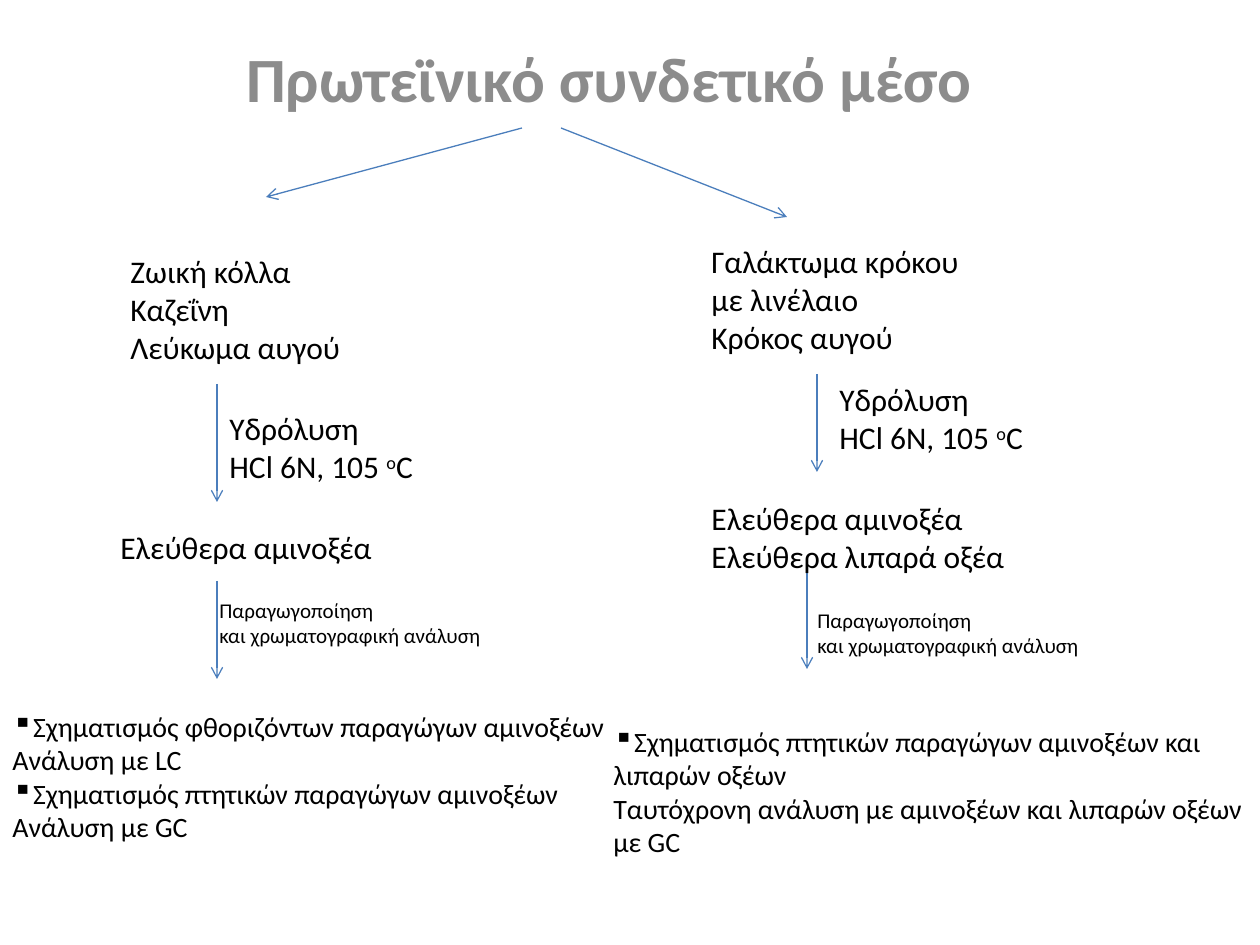
from lxml.etree import SubElement
from pptx import Presentation
from pptx.dml.color import RGBColor
from pptx.enum.shapes import MSO_CONNECTOR
from pptx.enum.text import MSO_ANCHOR, MSO_AUTO_SIZE, PP_ALIGN
from pptx.oxml.ns import qn
from pptx.util import Emu, Pt

PX = 914400 / 126
FONT = "Calibri"
COLORS = {"title": "8C8C8C", "text": "000000", "arrow": "4B7EBC"}

# Content: a line starting with the bullet sign is a bulleted one
BULLET = "▪"
SUPERSCRIPT = "^"
TITLE = ("Πρωτεϊνικό συνδετικό μέσο", (168, 33, 882, 105))
HYDROLYSIS = ["Υδρόλυση", "HCl 6N, 105 ^o^C"]
DERIVATIZATION = ["Παραγωγοποίηση", "και χρωματογραφική ανάλυση"]

# Each branch: texts as (lines, size, wrap, (left, top, width, height)), arrows as (from, to)
BRANCHES = [
    {
        "texts": [
            (["Ζωική κόλλα", "Καζεΐνη", "Λεύκωμα αυγού"], 18, False, (118, 246, 237, 127)),
            (HYDROLYSIS, 18, False, (217, 403, 220, 89)),
            (["Ελεύθερα αμινοξέα"], 18, False, (108, 522, 280, 50)),
            (DERIVATIZATION, 12, False, (207, 591, 294, 63)),
            (["▪Σχηματισμός φθοριζόντων παραγώγων αμινοξέων", "Ανάλυση με LC",
              "▪Σχηματισμός πτητικών παραγώγων αμινοξέων", "Ανάλυση με GC"],
             16, True, (0, 703, 650, 149)),
        ],
        "arrows": [((522, 128), (266, 197)), ((217, 384), (217, 502)), ((217, 581), (217, 679))],
    },
    {
        "texts": [
            (["Γαλάκτωμα κρόκου", "με λινέλαιο", "Κρόκος αυγού"], 18, False, (699, 236, 275, 127)),
            (HYDROLYSIS, 18, False, (827, 374, 220, 89)),
            (["Ελεύθερα αμινοξέα", "Ελεύθερα λιπαρά οξέα"], 18, False, (699, 493, 321, 89)),
            (DERIVATIZATION, 12, False, (805, 601, 294, 63)),
            (["▪Σχηματισμός πτητικών παραγώγων αμινοξέων και λιπαρών οξέων",
              "Ταυτόχρονη ανάλυση με αμινοξέων και λιπαρών οξέων με GC"],
             16, True, (601, 718, 659, 149)),
        ],
        "arrows": [((561, 128), (787, 217)), ((817, 374), (817, 472)), ((807, 571), (807, 669))],
    },
]


def px(*values):
    return [Emu(round(value * PX)) for value in values]


def format_font(font, **values):
    for name, value in {"name": FONT, **values}.items():
        setattr(font, name, value)


def add_line(para, line, size):
    if line.startswith(BULLET):
        properties = para._p.get_or_add_pPr()
        properties.set("marL", "0")
        properties.set("indent", "0")
        SubElement(properties, qn("a:buChar"), char=BULLET)
        line = line.removeprefix(BULLET)
    for index, part in enumerate(line.split(SUPERSCRIPT)):
        span = para.add_run()
        span.text = part
        format_font(span.font, size=Pt(size))
        span.font.color.rgb = RGBColor.from_string(COLORS["text"])
        if index % 2:
            span._r.get_or_add_rPr().set("baseline", "30000")


def add_text(slide, lines, size, wrap, place):
    frame = slide.shapes.add_textbox(*px(*place)).text_frame
    frame.word_wrap = wrap
    frame.auto_size = MSO_AUTO_SIZE.SHAPE_TO_FIT_TEXT
    for index, line in enumerate(lines):
        para = frame.add_paragraph() if index else frame.paragraphs[0]
        add_line(para, line, size)


def add_arrow(slide, start, end):
    arrow = slide.shapes.add_connector(MSO_CONNECTOR.STRAIGHT, *px(*start, *end))
    arrow.line.color.rgb = RGBColor.from_string(COLORS["arrow"])
    arrow.line.width = Pt(0.75)
    SubElement(arrow.line._get_or_add_ln(), qn("a:tailEnd"), type="arrow")
    SubElement(arrow._element.spPr, qn("a:effectLst"))


def add_title(slide):
    text, place = TITLE
    title = slide.shapes.title
    title.left, title.top, title.width, title.height = px(*place)
    frame = title.text_frame
    frame.vertical_anchor = MSO_ANCHOR.TOP
    frame.text = text
    para = frame.paragraphs[0]
    para.alignment = PP_ALIGN.CENTER
    font = para.runs[0].font
    format_font(font, size=Pt(36), bold=True)
    font.color.rgb = RGBColor.from_string(COLORS["title"])


def main():
    deck = Presentation()
    deck.slide_width, deck.slide_height = px(1260, 945)
    slide = deck.slides.add_slide(deck.slide_layouts[5])
    add_title(slide)
    # Two branches of the analysis
    for branch in BRANCHES:
        for start, end in branch["arrows"]:
            add_arrow(slide, start, end)
        for text in branch["texts"]:
            add_text(slide, *text)
    deck.save("out.pptx")


if __name__ == "__main__":
    main()
